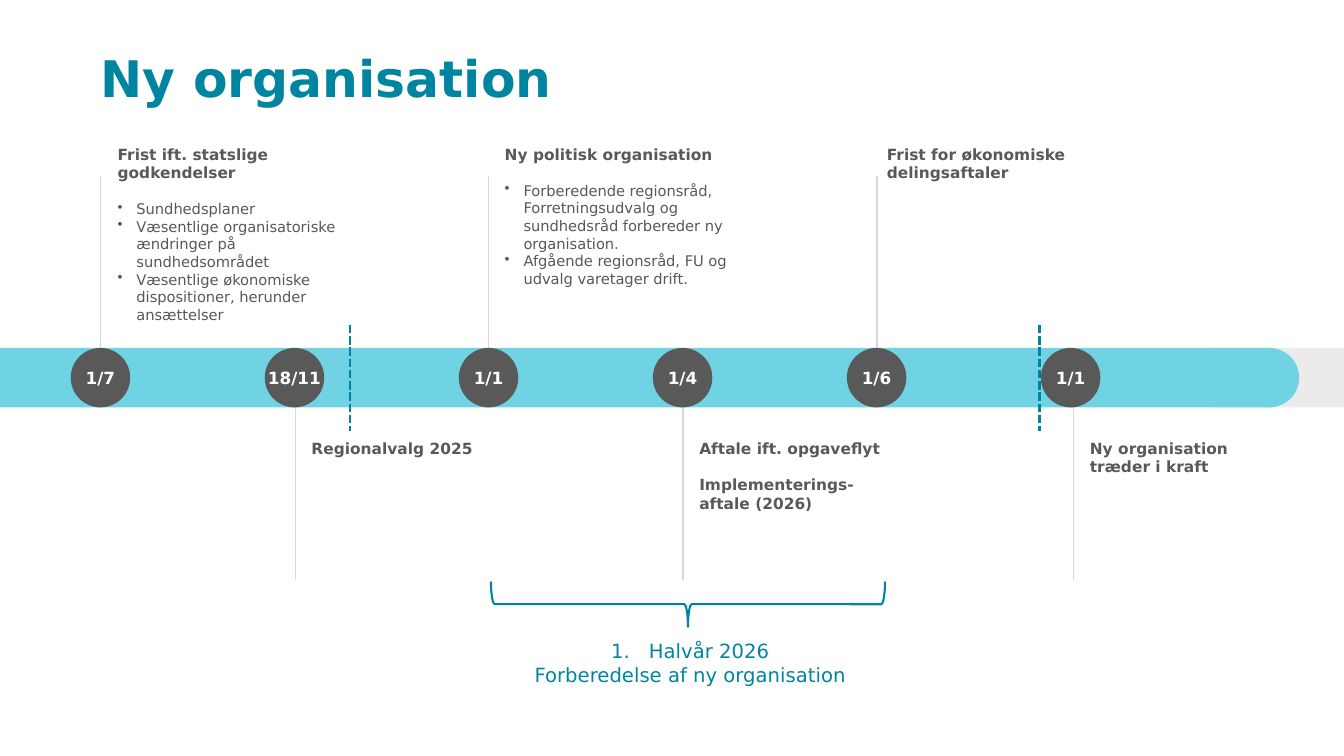
from lxml import etree
from pptx import Presentation
from pptx.dml.color import RGBColor
from pptx.enum import dml, shapes, text
from pptx.oxml import ns
from pptx.util import Pt

TEAL = RGBColor(0x00, 0x85, 0xA1)
AQUA = RGBColor(0x6F, 0xD3, 0xE3)
DARK = RGBColor(0x59, 0x59, 0x59)
PALE = RGBColor(0xD9, 0xD9, 0xD9)
WHITE = RGBColor(0xFF, 0xFF, 0xFF)

SHAPE = shapes.MSO_SHAPE
CENTER = text.PP_ALIGN.CENTER
BAND_TOP, BAND_HEIGHT = 248.5, 42.5
BAND_BOTTOM = BAND_TOP + BAND_HEIGHT
FIRST_DATE, DATE_STEP = 50.5, 138.6
LABEL_GAP = 13  # one heading line between the parts of a label


class TimelineSlide:
    """Holds the slide and its style, and draws each kind of element."""

    font_name = "DejaVu Sans"

    def __init__(self, slide):
        self.slide = slide

    def shape(self, kind, left, top, width, height, fill=None):
        item = self.slide.shapes.add_shape(
            kind, Pt(left), Pt(top), Pt(width), Pt(height))
        item.shadow.inherit = False
        item.line.fill.background()
        if fill is None:
            item.fill.background()
        else:
            item.fill.solid()
            item.fill.fore_color.rgb = fill
        return item

    def line(self, x, top, bottom, color, width, dash=None):
        item = self.slide.shapes.add_connector(
            shapes.MSO_CONNECTOR.STRAIGHT, Pt(x), Pt(top), Pt(x), Pt(bottom))
        item.line.color.rgb = color
        item.line.width = Pt(width)
        if dash:
            item.line.dash_style = dash
        etree.SubElement(item._element.spPr, ns.qn("a:effectLst"))

    def text_box(self, left, top, width, height, insets=(0, 0, 0, 0)):
        frame = self.slide.shapes.add_textbox(
            Pt(left), Pt(top), Pt(width), Pt(height)).text_frame
        frame.word_wrap = True
        self.set_insets(frame, insets)
        return frame

    def set_insets(self, frame, insets):
        (frame.margin_left, frame.margin_top,
         frame.margin_right, frame.margin_bottom) = map(Pt, insets)

    def paragraph(self, frame, words, size, color, bold=False, align=None,
                  before=0, indent=0, bullet=None):
        first = not frame.paragraphs[0].runs
        para = frame.paragraphs[0] if first else frame.add_paragraph()
        para.text = words
        if bullet:
            tag, attribute, value = bullet
            props = para._p.get_or_add_pPr()
            props.set("marL", str(Pt(indent)))
            props.set("indent", str(-Pt(indent)))
            etree.SubElement(props, ns.qn(tag)).set(attribute, value)
        if align:
            para.alignment = align
        if before and not first:
            para.space_before = Pt(before)
        para.font.name = self.font_name
        para.font.size = Pt(size)
        para.font.bold = bold
        para.font.color.rgb = color
        return para

    def date(self, left, words):
        circle = self.shape(SHAPE.OVAL, left, BAND_TOP,
                            BAND_HEIGHT, BAND_HEIGHT, DARK)
        frame = circle.text_frame
        frame.word_wrap = False
        frame.vertical_anchor = text.MSO_ANCHOR.MIDDLE
        self.set_insets(frame, (0, 0, 0, 0))
        self.paragraph(frame, words, 12, WHITE, True, CENTER)

    def label(self, left, top, width, height, headings, bullets):
        frame = self.text_box(left, top, width, height, (11.5, 0, 0, 0))
        for heading in headings:
            self.paragraph(frame, heading, 11, DARK, True, before=LABEL_GAP)
        for i, point in enumerate(bullets):
            self.paragraph(frame, point, 10.5, DARK, indent=13.5,
                           before=0 if i else LABEL_GAP,
                           bullet=("a:buChar", "char", "•"))


# Date, stem x, label x, label width, above the band, headings, bullets
MILESTONES = [
    ("1/7", 72, 72.5, 171.5, True, ["Frist ift. statslige godkendelser"],
     ["Sundhedsplaner",
      "Væsentlige organisatoriske ændringer på sundhedsområdet",
      "Væsentlige økonomiske dispositioner, herunder ansættelser"]),
    ("18/11", 211, 211, 144, False, ["Regionalvalg 2025"], []),
    ("1/1", 349, 349, 171.5, True, ["Ny politisk organisation"],
     ["Forberedende regionsråd, Forretningsudvalg og sundhedsråd "
      "forbereder ny organisation.",
      "Afgående regionsråd, FU og udvalg varetager drift."]),
    ("1/4", 488, 488, 144, False,
     ["Aftale ift. opgaveflyt", "Implementerings-aftale (2026)"], []),
    ("1/6", 626.5, 622, 143.5, True,
     ["Frist for økonomiske delingsaftaler"], []),
    ("1/1", 767, 767, 144, False, ["Ny organisation træder i kraft"], []),
]


def main():
    deck = Presentation()
    deck.slide_width, deck.slide_height = Pt(960), Pt(540)
    page = TimelineSlide(deck.slides.add_slide(deck.slide_layouts[6]))

    # Title
    title = page.text_box(72, 38.5, 760, 42)
    page.paragraph(title, "Ny organisation", 36, TEAL, True).line_spacing = 0.9

    # Band with a rounded end over a half-transparent remainder
    remainder = page.shape(SHAPE.RECTANGLE, 867.5, BAND_TOP, 92.5,
                           BAND_HEIGHT, PALE)
    pale_fill = remainder._element.spPr.find(".//" + ns.qn("a:srgbClr"))
    etree.SubElement(pale_fill, ns.qn("a:alpha")).set("val", "50000")
    page.shape(SHAPE.RECTANGLE, 0, BAND_TOP, 907, BAND_HEIGHT, AQUA)
    page.shape(SHAPE.OVAL, 885.5, BAND_TOP, BAND_HEIGHT, BAND_HEIGHT, AQUA)

    # Milestones
    for i, (date, stem, left, width, above, headings, bullets) in enumerate(
            MILESTONES):
        if above:
            page.line(stem, 126, BAND_TOP, PALE, 1)
        else:
            page.line(stem, BAND_BOTTOM, 414, PALE, 1)
        page.date(FIRST_DATE + i * DATE_STEP, date)
        label_top, label_height = (103.5, 127) if above else (313.5, 64)
        page.label(left, label_top, width, label_height, headings, bullets)

    # Dashed period limits
    for limit in (250, 742.5):
        page.line(limit, 232, 308, TEAL, 2, dml.MSO_LINE.SQUARE_DOT)

    # Brace and caption for the half-year
    brace = page.shape(SHAPE.RIGHT_BRACE, 475.2, 290.8, 32.4, 281.5)
    brace.rotation = 90
    brace.line.color.rgb = TEAL
    brace.line.width = Pt(1.5)
    half_year = page.text_box(338.5, 453, 309, 41, (7.2, 3.6, 7.2, 3.6))
    page.paragraph(half_year, "Halvår 2026", 14, TEAL, align=CENTER, indent=27,
                   bullet=("a:buAutoNum", "type", "arabicPeriod"))
    page.paragraph(half_year, "Forberedelse af ny organisation", 14, TEAL,
                   align=CENTER)

    deck.save("out.pptx")


if __name__ == "__main__":
    main()
